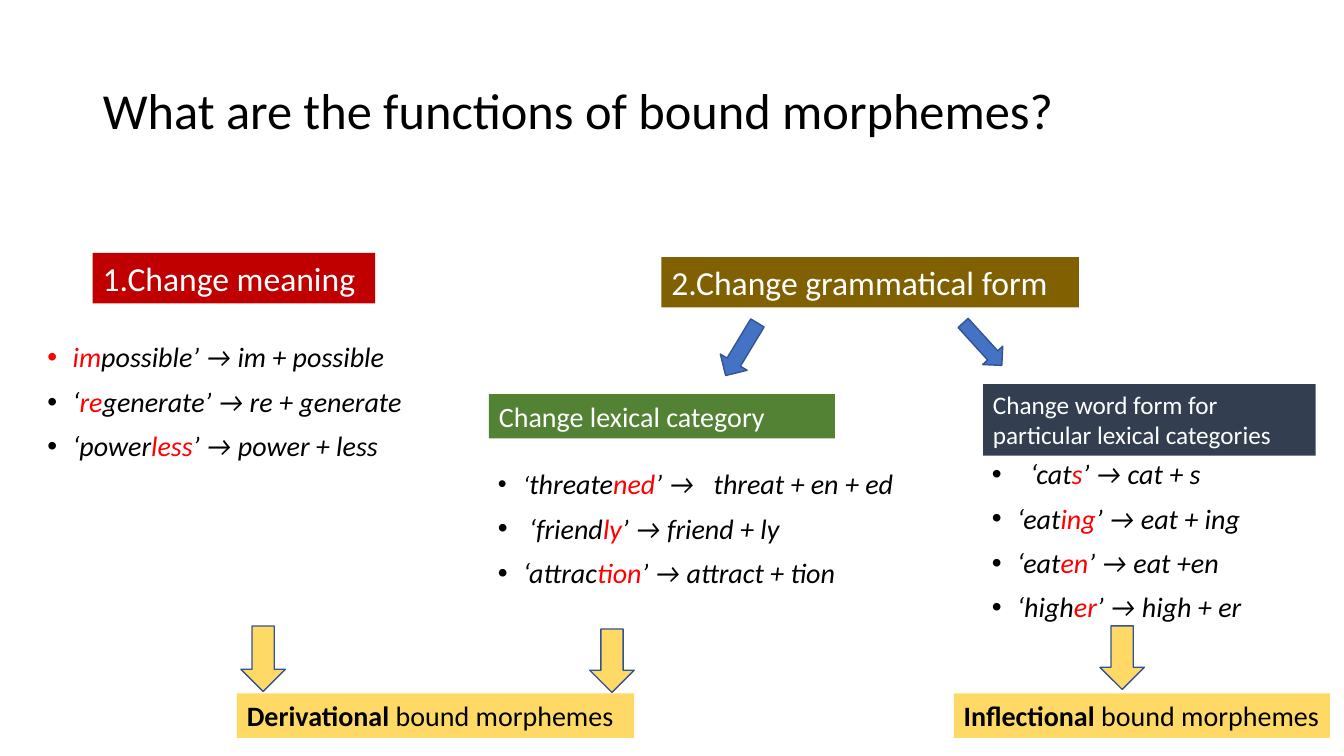
from lxml import etree
from pptx import Presentation
from pptx import util as u
from pptx.dml.color import RGBColor
from pptx.enum import shapes, text
from pptx.oxml import ns

PX = 9144  # 100 px to the inch
FONT = "Calibri"
BLACK = RGBColor(0x00, 0x00, 0x00)
WHITE = RGBColor(0xFF, 0xFF, 0xFF)
RED = RGBColor(0xFF, 0x00, 0x00)
CRIMSON = RGBColor(0xC0, 0x00, 0x00)
BROWN = RGBColor(0x80, 0x60, 0x00)
GREEN = RGBColor(0x54, 0x82, 0x35)
SLATE = RGBColor(0x33, 0x3F, 0x50)
YELLOW = RGBColor(0xFF, 0xD9, 0x66)
BLUE = RGBColor(0x44, 0x72, 0xC4)
EDGE = RGBColor(0x32, 0x54, 0x91)


def scale(box):
    return [n * PX for n in box]


def place(shape, box):
    shape.left, shape.top, shape.width, shape.height = scale(box)


def add_run(para, words, size, color, bold=False, italic=False):
    run = para.add_run()
    run.text = words
    font = run.font
    font.name, font.size = FONT, u.Pt(size)
    font.bold, font.italic = bold, italic
    font.color.rgb = color


def add_title(slide, box, words):
    title = slide.shapes.title
    place(title, box)
    frame = title.text_frame
    frame.auto_size = text.MSO_AUTO_SIZE.NONE
    frame.vertical_anchor = text.MSO_ANCHOR.MIDDLE
    para = frame.paragraphs[0]
    para.alignment = text.PP_ALIGN.LEFT
    para.line_spacing = 0.9
    add_run(para, words, 36, BLACK)


def add_bullet(para, indent, tab):
    props = para._p.get_or_add_pPr()
    props.set("marL", str(indent * PX))
    props.set("indent", str(-indent * PX))
    etree.SubElement(props, ns.qn("a:buFont"), typeface="Arial")
    etree.SubElement(props, ns.qn("a:buChar"), char="•")
    if tab:
        tabs = etree.SubElement(props, ns.qn("a:tabLst"))
        etree.SubElement(tabs, ns.qn("a:tab"), pos=str(tab * PX), algn="l")


def fill_list(shape, box, rows, indents=None, tabs=None, quote=20):
    """Bullet the rows; the part between bars is red. Quote sizes the first mark."""
    place(shape, box)
    frame = shape.text_frame
    frame.word_wrap = True
    frame.auto_size = text.MSO_AUTO_SIZE.NONE
    for i, row in enumerate(rows):
        para = frame.paragraphs[0] if i == 0 else frame.add_paragraph()
        para.line_spacing, para.space_before = 0.9, u.Pt(10)
        add_bullet(para, (indents or {}).get(i, 25), (tabs or {}).get(i))
        stem, affix, rest = row.split("|")
        if i == 0 and quote != 20:
            add_run(para, stem[0], quote, BLACK, italic=True)
            stem = stem[1:]
        for part, color in ((stem, BLACK), (affix, RED), (rest, BLACK)):
            if part:
                add_run(para, part, 20, color, italic=True)


def add_label(slide, box, fill, size, words, color=WHITE, strong=""):
    label = slide.shapes.add_shape(shapes.MSO_SHAPE.RECTANGLE, *scale(box))
    label.shadow.inherit = False
    label.fill.solid()
    label.fill.fore_color.rgb = fill
    label.line.fill.background()
    frame = label.text_frame
    frame.word_wrap = True
    frame.vertical_anchor = text.MSO_ANCHOR.TOP
    para = frame.paragraphs[0]
    para.alignment = text.PP_ALIGN.LEFT
    if strong:
        add_run(para, strong, size, color, bold=True)
    add_run(para, words, size, color)


def add_arrow(slide, box, fill, turn=0):
    arrow = slide.shapes.add_shape(shapes.MSO_SHAPE.DOWN_ARROW, *scale(box))
    arrow.shadow.inherit = False
    arrow.fill.solid()
    arrow.fill.fore_color.rgb = fill
    arrow.line.color.rgb = EDGE
    arrow.line.width = u.Pt(1)
    arrow.rotation = turn


def add_list(slide, box, rows, **looks):
    fill_list(slide.shapes.add_textbox(*scale(box)), box, rows, **looks)


def add_meaning(slide, x, y):
    fill_list(slide.placeholders[1], (x, y + 85, 405, 154), [
        "|im|possible’ → im + possible",
        "‘|re|generate’ → re + generate",
        "‘power|less|’ → power + less",
    ])
    add_label(slide, (x + 55, y, 280, 50), CRIMSON, 24, "1.Change meaning")


def add_grammar(slide, x, y):
    add_label(slide, (x + 171, y, 414, 50), BROWN, 24, "2.Change grammatical form")
    add_arrow(slide, (x + 235, y + 61, 31, 61), BLUE, 31.2)
    add_arrow(slide, (x + 476, y + 58, 27, 57), BLUE, 317.7)
    add_list(slide, (x - 1, y + 207, 444, 129), [
        "‘threate|ned|’ →\tthreat + en + ed",
        "‘friend|ly|’ → friend + ly",
        "‘attrac|tion|’ → attract + tion",
    ], indents={1: 31}, tabs={0: 214}, quote=18)
    add_label(slide, (x, y + 136, 343, 44), GREEN, 20, "Change lexical category")
    add_list(slide, (x + 489, y + 197, 322, 173), [
        "‘cat|s|’ → cat + s",
        "‘eat|ing|’ → eat + ing",
        "‘eat|en|’ → eat +en",
        "‘high|er|’ → high + er",
    ], indents={0: 38})
    add_label(slide, (x + 490, y + 126, 330, 71), SLATE, 18,
              "Change word form for particular lexical categories")


def add_result(slide, box, kind, arrows):
    """Yellow label with arrows, each given as offset, rise and height."""
    x, y = box[:2]
    for shift, rise, high in arrows:
        add_arrow(slide, (x + shift, y - rise, 44, high), YELLOW)
    add_label(slide, box, YELLOW, 20, " bound morphemes", BLACK, kind)


def main():
    deck = Presentation()
    deck.slide_width, deck.slide_height = 1333 * PX, 750 * PX
    slide = deck.slides.add_slide(deck.slide_layouts[1])
    add_title(slide, (92, 40, 1150, 145), "What are the functions of bound morphemes?")
    add_meaning(slide, 37, 251)
    add_grammar(slide, 485, 255)
    add_result(slide, (946, 688, 373, 44), "Inflectional", [(145, 67, 63)])
    add_result(slide, (235, 688, 394, 44), "Derivational",
               [(4, 67, 65), (350, 64, 63)])
    deck.save("out.pptx")


if __name__ == "__main__":
    main()
